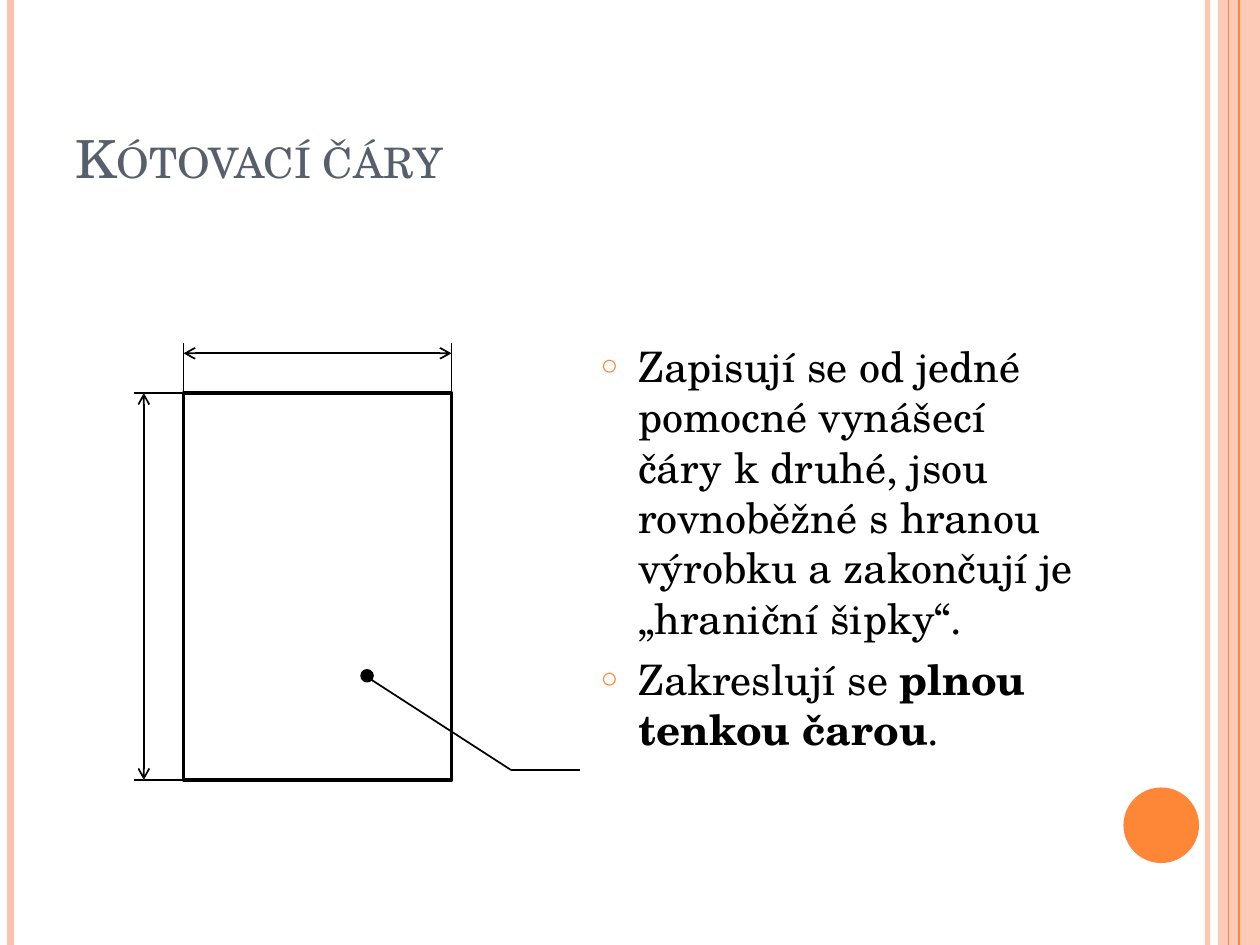
"""Build a slide about dimension lines in technical drawing."""
from dataclasses import dataclass

from lxml import etree
from pptx import Presentation
from pptx.dml.color import RGBColor
from pptx.enum.shapes import MSO_CONNECTOR, MSO_SHAPE
from pptx.enum.text import MSO_ANCHOR, MSO_AUTO_SIZE, PP_ALIGN
from pptx.oxml.ns import qn
from pptx.util import Pt

STRAIGHT = MSO_CONNECTOR.STRAIGHT
RECT = MSO_SHAPE.RECTANGLE
OVAL = MSO_SHAPE.OVAL
PROCESS = MSO_SHAPE.FLOWCHART_PROCESS
DOT = MSO_SHAPE.FLOWCHART_CONNECTOR
BOTTOM, TOP = MSO_ANCHOR.BOTTOM, MSO_ANCHOR.TOP
LEFT = PP_ALIGN.LEFT
NO_FIT = MSO_AUTO_SIZE.NONE


@dataclass(frozen=True)
class Theme:
    """Colours, font and type sizes of the slide."""
    font: str = "TeX Gyre Schola"
    ink: str = "000000"
    paper: str = "FFFFFF"
    slate: str = "575F6D"
    orange: str = "FE8637"
    peach: str = "FEC3AE"
    title: int = 30
    body: int = 24


def add_tag(parent, tag, **attrs):
    """Append one DrawingML element to a parent."""
    return etree.SubElement(parent, qn(tag), attrs)


class Painter:
    """Draw each kind of element on the current slide."""

    def __init__(self, slide, theme):
        """Keep the slide and its theme."""
        self.slide = slide
        self.theme = theme

    def fade(self, shape, alpha):
        """Set the opacity of a shape's colours in percent."""
        for color in shape.element.spPr.iter(qn("a:srgbClr")):
            add_tag(color, "a:alpha", val=str(alpha * 1000))

    def line(self, start, end, color, width=1, alpha=100, arrows=False):
        """Draw a straight line, with arrows at both ends if asked."""
        line = self.slide.shapes.add_connector(
            STRAIGHT, *(Pt(v) for v in (*start, *end)))
        line.line.color.rgb = RGBColor.from_string(color)
        line.line.width = Pt(width)
        props = line.element.spPr
        if arrows:
            for tag in ("a:headEnd", "a:tailEnd"):
                add_tag(props.find(qn("a:ln")), tag, type="arrow")
        add_tag(props, "a:effectLst")
        if alpha < 100:
            self.fade(line, alpha)

    def shape(self, kind, box, fill, edge=None, alpha=100):
        """Draw a filled preset shape, with an outline if asked."""
        shape = self.slide.shapes.add_shape(kind, *(Pt(v) for v in box))
        shape.shadow.inherit = False
        shape.fill.solid()
        shape.fill.fore_color.rgb = RGBColor.from_string(fill)
        if edge:
            shape.line.color.rgb = RGBColor.from_string(edge)
            shape.line.width = Pt(2)
        else:
            shape.line.fill.background()
        if alpha < 100:
            self.fade(shape, alpha)

    def place(self, holder, box, anchor):
        """Move a placeholder and return its text frame."""
        holder.left, holder.top, holder.width, holder.height = (
            Pt(v) for v in box)
        frame = holder.text_frame
        frame.word_wrap = True
        frame.auto_size = NO_FIT
        frame.vertical_anchor = anchor
        return frame

    def style(self, run, size, color):
        """Set the font of a run."""
        run.font.name = self.theme.font
        run.font.size = Pt(size)
        run.font.color.rgb = RGBColor.from_string(color)

    def title(self, text, box):
        """Fill the title in small capitals."""
        frame = self.place(self.slide.shapes.title, box, BOTTOM)
        frame.text = text
        para = frame.paragraphs[0]
        para.alignment = LEFT
        run = para.runs[0]
        self.style(run, self.theme.title, self.theme.slate)
        run.font._element.set("cap", "small")

    def bullet(self, para):
        """Give a paragraph its ring bullet and hanging indent."""
        para.space_before = Pt(6)
        props = para._p.get_or_add_pPr()
        indent = Pt(21.6)
        props.set("marL", str(indent))
        props.set("indent", str(-indent))
        color = add_tag(props, "a:buClr")
        add_tag(color, "a:srgbClr", val=self.theme.orange)
        add_tag(props, "a:buSzPct", val="70000")
        add_tag(props, "a:buChar", char="○")

    def list(self, items, box):
        """Fill the body; every second part of an item is bold."""
        frame = self.place(self.slide.placeholders[1], box, TOP)
        frame.text = "\n".join("" for _ in items)
        for para, parts in zip(frame.paragraphs, items):
            self.bullet(para)
            for i, part in enumerate(parts):
                run = para.add_run()
                run.text = part
                self.style(run, self.theme.body, self.theme.ink)
                run.font.bold = i % 2 == 1


def draw_frame(pen, width, height):
    """Draw the stripes and the disc at the slide's edges."""
    theme = pen.theme
    pen.shape(RECT, (width - 24, 0, 24, height), theme.peach, alpha=87)
    for x, color, weight, alpha in (
            (690, theme.peach, 3, 93), (6, theme.peach, 4.5, 100),
            (708, theme.orange, 1.5, 100), (702, theme.orange, 0.75, 100)):
        pen.line((x, 0), (x, height), color, weight, alpha)
    pen.shape(OVAL, (642, 450, 43.2, 43.2), theme.orange)


def draw_part(pen):
    """Draw the part with its dimension lines and its leader."""
    ink = pen.theme.ink
    left, top, right, base = 104.9, 224.6, 258, 445.7
    reach, gap = 28.4, 22.7
    pen.shape(PROCESS, (left, top, right - left, base - top),
              pen.theme.paper, ink)
    for x in (left, right):
        pen.line((x, top), (x, top - reach), ink)
    for y in (top, base):
        pen.line((left, y), (left - reach, y), ink)
    pen.line((left, top - gap), (right, top - gap), ink, arrows=True)
    pen.line((left - gap, top), (left - gap, base), ink, arrows=True)
    pen.shape(DOT, (206.9, 383.3, 5.7, 5.7), ink, ink)
    bend = (292, 440)
    pen.line((211.7, 388.1), bend, ink)
    pen.line(bend, (331.7, 440), ink)


def main():
    """Build and save the slide."""
    deck = Presentation()
    width, height = 720, 540
    deck.slide_width, deck.slide_height = Pt(width), Pt(height)
    slide = deck.slides.add_slide(deck.slide_layouts[1])
    pen = Painter(slide, Theme())
    draw_frame(pen, width, height)
    pen.title("Kótovací čáry", (36, 21.6, 588, 90))
    pen.list((
        ("Zapisují se od jedné pomocné vynášecí čáry k druhé, jsou "
         "rovnoběžné s hranou výrobku a zakončují je „hraniční šipky“.",),
        ("Zakreslují se ", "plnou tenkou čarou", "."),
    ), (336, 190.8, 288, 295.2))
    draw_part(pen)
    deck.save("out.pptx")


if __name__ == "__main__":
    main()
